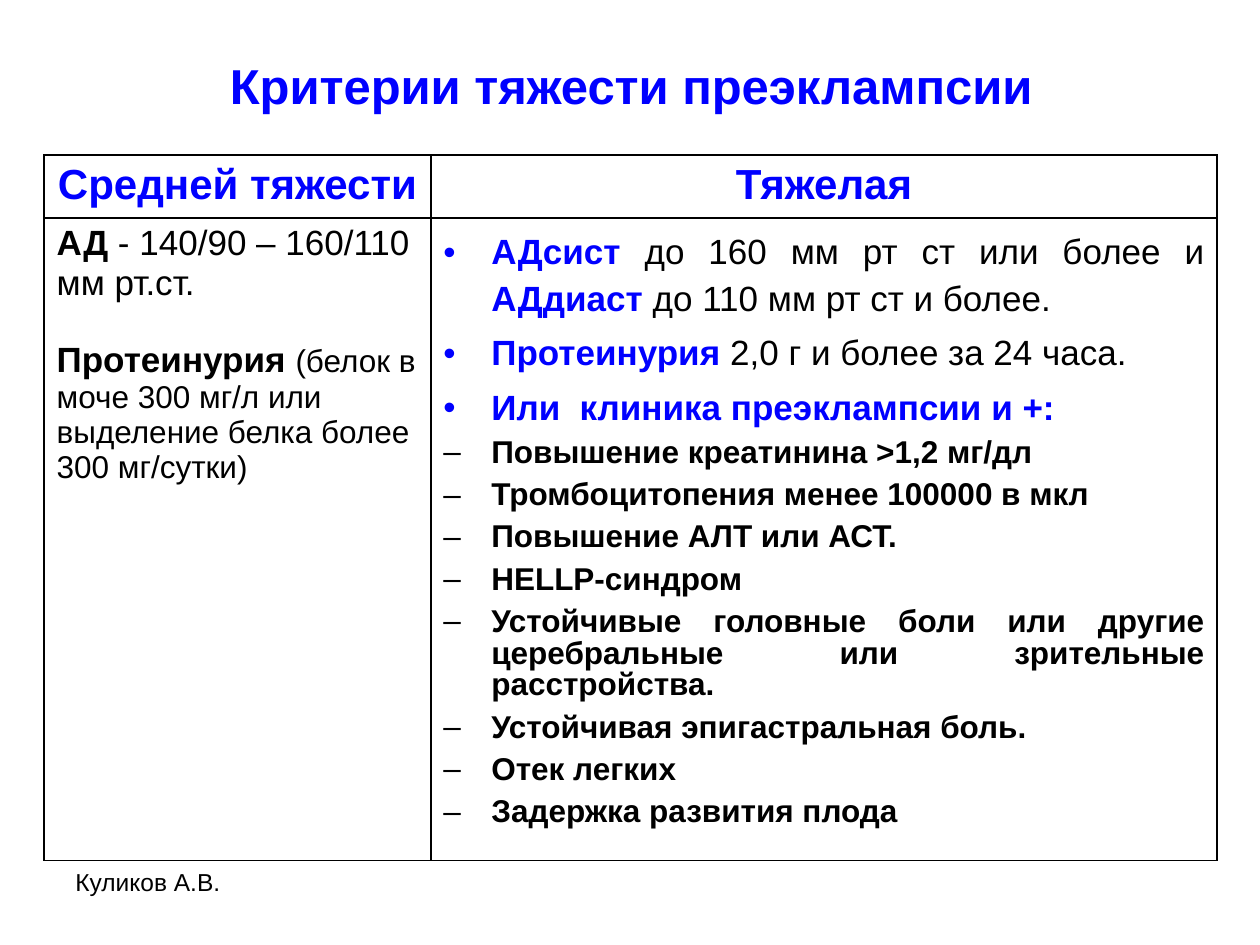
from lxml import etree
from pptx import Presentation
from pptx.dml.color import RGBColor
from pptx.enum.text import MSO_ANCHOR, PP_ALIGN
from pptx.oxml.ns import qn
from pptx.util import Inches, Pt

CENTER, LEFT, JUST = PP_ALIGN.CENTER, PP_ALIGN.LEFT, PP_ALIGN.JUSTIFY
MIDDLE = MSO_ANCHOR.MIDDLE

THEME = {
    "font": "Arial",
    "blue": RGBColor(0, 0, 255),
    "black": RGBColor(0, 0, 0),
    "title": Pt(28),
    "head": Pt(24),
    "body": Pt(20),
    "item": Pt(18),
    "foot": Pt(14),
}


def write(para, runs, size, align=LEFT):
    para.alignment = align
    para.font.name = THEME["font"]
    para.font.size = THEME[size]
    for text, color, bold, *other in runs:
        run = para.add_run()
        run.text = text
        run.font.color.rgb = THEME[color]
        run.font.bold = bold
        if other:
            run.font.size = THEME[other[0]]


def bullet(para, mark):
    props = para._p.get_or_add_pPr()
    props.set("marL", str(Inches(0.38)))
    props.set("indent", str(-Inches(0.38)))
    etree.SubElement(props, qn("a:buFont")).set("typeface", THEME["font"])
    etree.SubElement(props, qn("a:buChar")).set("char", mark)


deck = Presentation()
deck.slide_width, deck.slide_height = Inches(10), Inches(7.5)
slide = deck.slides.add_slide(deck.slide_layouts[5])

title = slide.shapes.title
title.left, title.top = Inches(0.51), Inches(0.44)
title.width, title.height = Inches(9), Inches(0.46)
title.text_frame.vertical_anchor = MIDDLE
write(title.text_frame.paragraphs[0],
      [("Критерии тяжести преэклампсии", "blue", True)], "title", CENTER)

table = slide.shapes.add_table(
    2, 2, Inches(0.35), Inches(1.23), Inches(9.31), Inches(5.6)).table
table.first_row = table.horz_banding = False
for col, width in zip(table.columns, (3.07, 6.24)):
    col.width = Inches(width)
for row, height in zip(table.rows, (0.5, 5.1)):
    row.height = Inches(height)

for cell in table.iter_cells():
    props = cell._tc.get_or_add_tcPr()
    for side in ("a:lnL", "a:lnR", "a:lnT", "a:lnB"):
        line = etree.SubElement(props, qn(side), w=str(Pt(1)))
        fill = etree.SubElement(line, qn("a:solidFill"))
        etree.SubElement(fill, qn("a:srgbClr"), val=str(THEME["black"]))
    cell.fill.background()

for col, text in enumerate(("Средней тяжести", "Тяжелая")):
    write(table.cell(0, col).text_frame.paragraphs[0],
          [(text, "blue", True)], "head", CENTER)

mild = table.cell(1, 0).text_frame
write(mild.paragraphs[0], [
    ("АД", "black", True),
    (" - 140/90 – 160/110 мм рт.ст.", "black", False)], "body")
para = mild.add_paragraph()
para.space_before = Pt(22)
write(para, [
    ("Протеинурия ", "black", True),
    ("(белок в моче 300 мг/л или выделение белка более 300 мг/сутки)",
     "black", False, "item")], "body")

signs = [
    [("АДсист ", "blue", True),
     ("до 160 мм рт ст или более и ", "black", False),
     ("АДдиаст ", "blue", True),
     ("до 110 мм рт ст и более.", "black", False)],
    [("Протеинурия ", "blue", True),
     ("2,0 г и более за 24 часа.", "black", False)],
    [("Или  клиника преэклампсии и +:", "blue", True)],
]
items = [
    "Повышение креатинина >1,2 мг/дл",
    "Тромбоцитопения менее 100000 в мкл",
    "Повышение АЛТ или АСТ.",
    "HELLP-синдром",
    "Устойчивые головные боли или другие церебральные или зрительные расстройства.",
    "Устойчивая эпигастральная боль.",
    "Отек легких",
    "Задержка развития плода",
]
rows = [(runs, "body", "•", Pt(27), Pt(4)) for runs in signs]
rows += [([(text, "black", True)], "item", "–", 0.9, Pt(6)) for text in items]

severe = table.cell(1, 1).text_frame
for i, (runs, size, mark, pitch, gap) in enumerate(rows):
    para = severe.add_paragraph() if i else severe.paragraphs[0]
    para.line_spacing = pitch
    para.space_before = gap
    bullet(para, mark)
    write(para, runs, size, JUST)

note = slide.shapes.add_textbox(
    Inches(0.5), Inches(6.83), Inches(2.33), Inches(0.52)).text_frame
note.word_wrap = True
write(note.paragraphs[0], [("Куликов А.В.", "black", False)], "foot")

deck.save("out.pptx")
